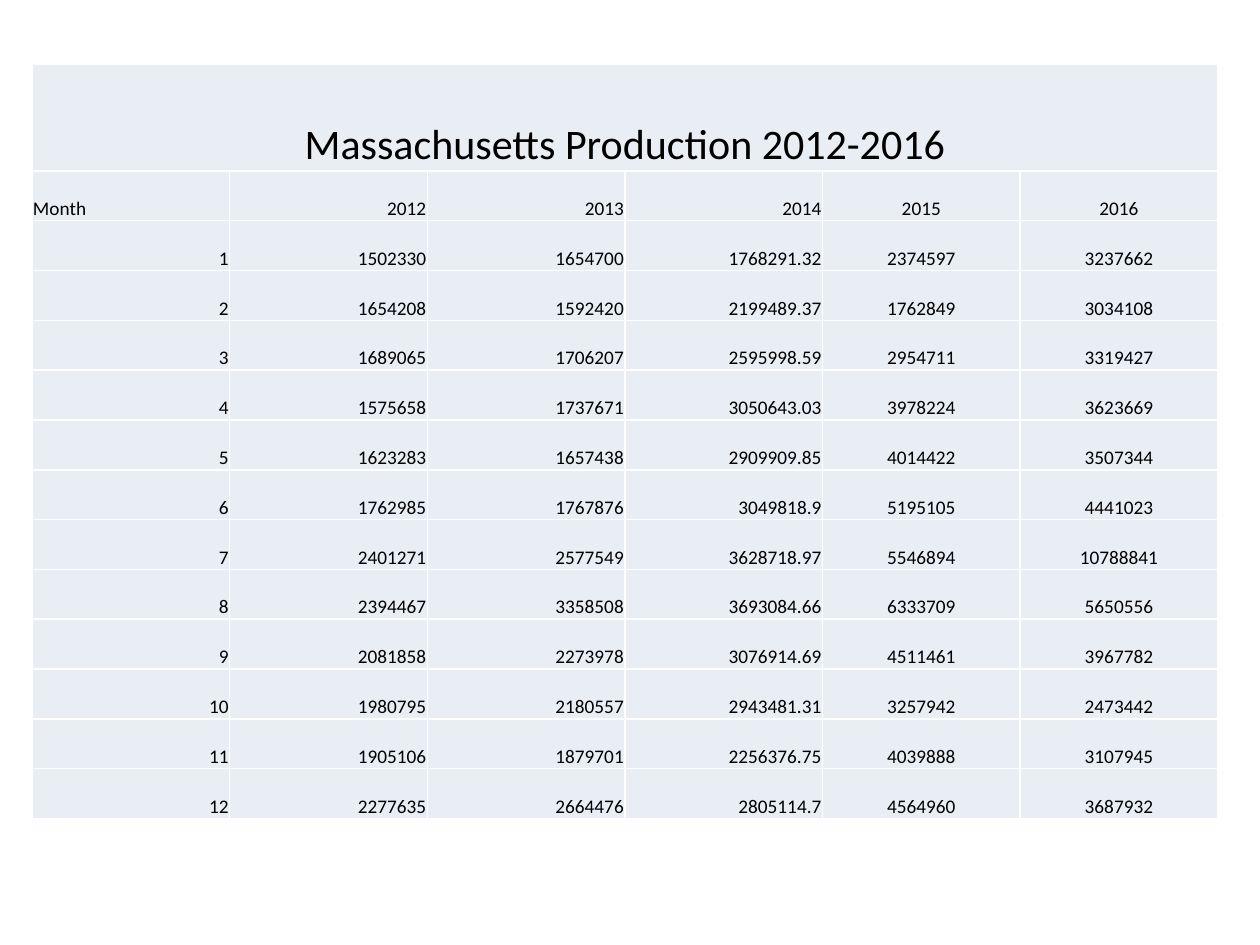
from lxml.etree import SubElement
from pptx import Presentation
from pptx.dml.color import RGBColor
from pptx.enum.text import MSO_ANCHOR as Anchor, PP_ALIGN as Align
from pptx.oxml.ns import qn
from pptx.util import Pt

PX = 914400 / 126
WHITE = RGBColor(0xFF, 0xFF, 0xFF)
BLACK = RGBColor(0x00, 0x00, 0x00)
PALE_BLUE = RGBColor(0xE9, 0xED, 0xF4)

TITLE = "Massachusetts Production 2012-2016"
YEARS = ["2012", "2013", "2014", "2015", "2016"]
PRODUCTION = [
    ["1502330", "1654700", "1768291.32", "2374597", "3237662"],
    ["1654208", "1592420", "2199489.37", "1762849", "3034108"],
    ["1689065", "1706207", "2595998.59", "2954711", "3319427"],
    ["1575658", "1737671", "3050643.03", "3978224", "3623669"],
    ["1623283", "1657438", "2909909.85", "4014422", "3507344"],
    ["1762985", "1767876", "3049818.9", "5195105", "4441023"],
    ["2401271", "2577549", "3628718.97", "5546894", "10788841"],
    ["2394467", "3358508", "3693084.66", "6333709", "5650556"],
    ["2081858", "2273978", "3076914.69", "4511461", "3967782"],
    ["1980795", "2180557", "2943481.31", "3257942", "2473442"],
    ["1905106", "1879701", "2256376.75", "4039888", "3107945"],
    ["2277635", "2664476", "2805114.7", "4564960", "3687932"],
]
COLUMN_ALIGN = [Align.RIGHT] * 4 + [Align.CENTER] * 2


def px(length):
    return round(length * PX)


class SlideBuilder:
    font = "Calibri"
    cell_format = {
        "vertical_anchor": Anchor.BOTTOM,
        "margin_left": px(1),
        "margin_right": px(1),
        "margin_top": px(1),
        "margin_bottom": 0,
    }

    def __init__(self, slide):
        self.slide = slide

    def borders(self, cell):
        properties = cell._tc.get_or_add_tcPr()
        for side in ("a:lnL", "a:lnR", "a:lnT", "a:lnB"):
            border = SubElement(properties, qn(side), w=str(Pt(1)))
            paint = SubElement(border, qn("a:solidFill"))
            SubElement(paint, qn("a:srgbClr"), val=str(WHITE))

    def style_cell(self, cell):
        for attribute, value in self.cell_format.items():
            setattr(cell, attribute, value)
        self.borders(cell)
        cell.fill.solid()
        cell.fill.fore_color.rgb = PALE_BLUE

    def cell_text(self, cell, text, align, size):
        paragraph = cell.text_frame.paragraphs[0]
        paragraph.alignment = align
        run = paragraph.add_run()
        run.text = text
        for attribute, value in {"name": self.font, "size": Pt(size), "bold": False}.items():
            setattr(run.font, attribute, value)
        run.font.color.rgb = BLACK

    def table(self, title, rows, left, top, width, height, title_height):
        columns = len(rows[0])
        table = self.slide.shapes.add_table(
            len(rows) + 1, columns, px(left), px(top), px(width), px(height)
        ).table
        table.first_row = table.horz_banding = False
        for column in table.columns:
            column.width = px(width / columns)
        for row in table.rows:
            row.height = px((height - title_height) / len(rows))
        table.rows[0].height = px(title_height)
        for cell in table.iter_cells():
            self.style_cell(cell)

        table.cell(0, 0).merge(table.cell(0, columns - 1))
        self.cell_text(table.cell(0, 0), title, Align.CENTER, 24)
        for r, values in enumerate(rows, 1):
            for c, value in enumerate(values):
                align = Align.LEFT if value == "Month" else COLUMN_ALIGN[c]
                self.cell_text(table.cell(r, c), value, align, 11)


def main():
    deck = Presentation()
    deck.slide_width, deck.slide_height = px(1260), px(945)
    builder = SlideBuilder(deck.slides.add_slide(deck.slide_layouts[6]))
    months = [[str(month), *values] for month, values in enumerate(PRODUCTION, 1)]
    builder.table(TITLE, [["Month", *YEARS], *months], 32, 64, 1186, 755, 107)
    deck.save("out.pptx")


if __name__ == "__main__":
    main()
